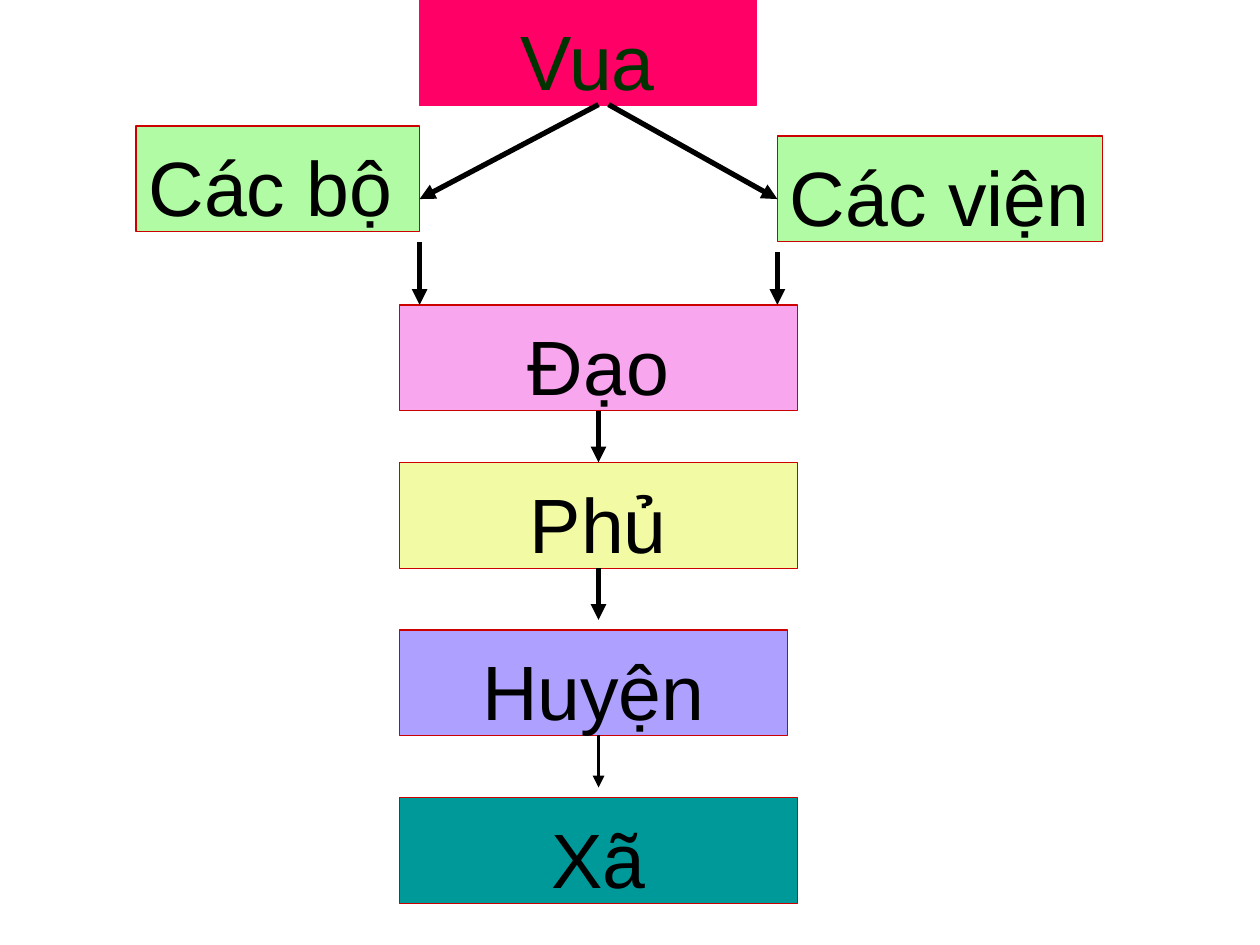
"""Build a slide charting the levels of government from king to commune."""
import pptx
import pptx.dml.color
import pptx.enum.shapes
import pptx.enum.text
import pptx.oxml.ns
import pptx.util
from lxml import etree

Inches = pptx.util.Inches
COLORS = {
    "king": "FF0066", "king_text": "003300", "court": "B0FBA3",
    "dao": "F8A6EE", "phu": "F2FAA4", "huyen": "ADA0FE", "xa": "009999",
    "border": "CC0000", "black": "000000",
}


class Chart:
    font = "Arial"
    size = 44
    box_height = 0.84

    def __init__(self, slide):
        self.slide = slide

    def color(self, name):
        return pptx.dml.color.RGBColor.from_string(COLORS[name])

    def box(self, text, left, top, width, fill, border="border", ink="black", align="CENTER"):
        sp = self.slide.shapes.add_shape(
            pptx.enum.shapes.MSO_SHAPE.RECTANGLE,
            Inches(left), Inches(top), Inches(width), Inches(self.box_height))
        sp.shadow.inherit = False
        sp.fill.solid()
        sp.fill.fore_color.rgb = self.color(fill)
        sp.line.color.rgb = self.color(border)
        sp.line.width = pptx.util.Pt(0.75)
        tf = sp.text_frame
        tf.word_wrap = True
        tf.vertical_anchor = pptx.enum.text.MSO_ANCHOR.TOP
        tf.margin_top = Inches(0.11)
        tf.margin_bottom = 0
        p = tf.paragraphs[0]
        p.alignment = pptx.enum.text.PP_ALIGN[align]
        r = p.add_run()
        r.text = text
        r.font.name = self.font
        r.font.size = pptx.util.Pt(self.size)
        r.font.color.rgb = self.color(ink)
        return sp

    def arrow(self, start, end, width=3, source=None, target=None):
        cxn = self.slide.shapes.add_connector(
            pptx.enum.shapes.MSO_CONNECTOR.STRAIGHT, *map(Inches, start + end))
        cxn.line.color.rgb = self.color("black")
        cxn.line.width = pptx.util.Pt(width)
        qn = pptx.oxml.ns.qn
        etree.SubElement(cxn.line._get_or_add_ln(), qn("a:tailEnd"), type="triangle")
        etree.SubElement(cxn._element.spPr, qn("a:effectLst"))
        if source is not None:
            cxn.begin_connect(source, 2)
        if target is not None:
            cxn.end_connect(target, 0)


def main():
    prs = pptx.Presentation()
    prs.slide_width, prs.slide_height = Inches(10), Inches(7.5)
    chart = Chart(prs.slides.add_slide(prs.slide_layouts[6]))

    chart.box("Vua", 3.33, 0, 2.67, "king", border="king", ink="king_text")
    chart.box("Các viện", 6.17, 1.08, 2.58, "court", align="LEFT")
    chart.box("Các bộ", 1.08, 1, 2.25, "court", align="LEFT")
    levels = [
        chart.box(text, 3.17, top, width, fill)
        for text, top, width, fill in (
            ("Đạo", 2.42, 3.16, "dao"),
            ("Phủ", 3.67, 3.16, "phu"),
            ("Huyện", 5, 3.08, "huyen"),
            ("Xã", 6.33, 3.16, "xa"),
        )
    ]
    dao, phu = levels[:2]

    for king_x, court_x, court_y in ((4.75, 3.33, 1.92), (4.83, 6.17, 2)):
        chart.arrow((king_x, 0.83), (court_x, 1.58))
        chart.arrow((court_x, court_y), (court_x, 2.42))
    chart.arrow((4.75, 3.25), (4.75, 3.67), source=dao, target=phu)
    chart.arrow((4.75, 4.5), (4.75, 4.92), source=phu)
    chart.arrow((4.75, 5.83), (4.75, 6.25), width=2.25)

    prs.save("out.pptx")


if __name__ == "__main__":
    main()
